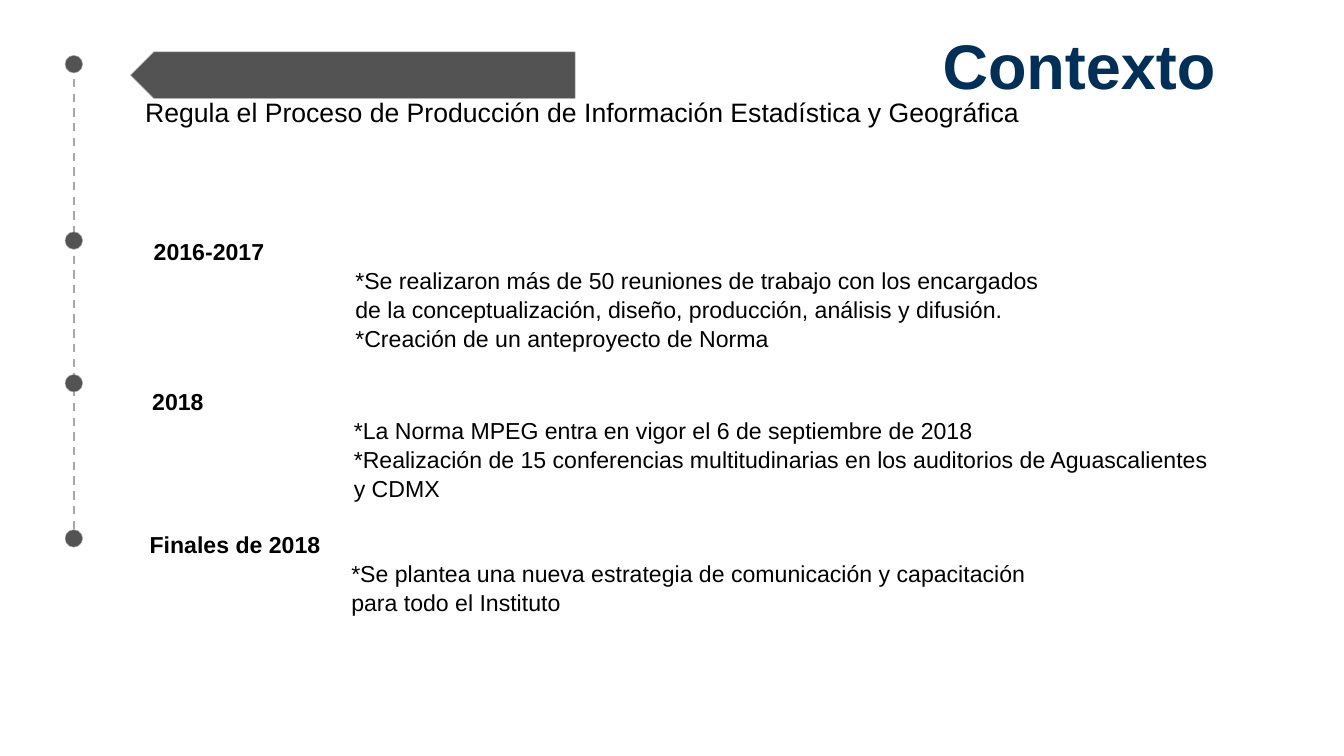
from pptx import Presentation
from pptx.dml.color import RGBColor
from pptx.enum.dml import MSO_LINE
from pptx.enum.shapes import MSO_CONNECTOR, MSO_SHAPE
from pptx.enum.text import MSO_ANCHOR, MSO_AUTO_SIZE, PP_ALIGN
from pptx.oxml.ns import qn
from pptx.util import Pt
from lxml.etree import SubElement

# Content: boxes are (left, top, width, height) in points
TITLE = ("Contexto", (1224, 25, 635, 132.5))
SUBTITLE = ("Regula el Proceso de Producción de Información Estadística y Geográfica",
            (200, 128, 1350, 74))
MILESTONES = [
    ("2016-2017", (212.4, 329.8, 1312, 165), [
        "*Se realizaron más de 50 reuniones de trabajo con los encargados "
        "de la conceptualización, diseño, producción, análisis y difusión.",
        "*Creación de un anteproyecto de Norma"]),
    ("2018", (210.2, 543.9, 1534.3, 165), [
        "*La Norma MPEG entra en vigor el 6 de septiembre de 2018",
        "*Realización de 15 conferencias multitudinarias en los auditorios "
        "de Aguascalientes y CDMX"]),
    ("Finales de 2018", (206.6, 748.4, 1283.8, 130), [
        "*Se plantea una nueva estrategia de comunicación y capacitación "
        "para todo el Instituto"]),
]
DOT_TOPS = [79.2, 331.2, 535, 756.7]
DOT_SIZE = 25
TIMELINE_X = 105.5
BANNER = (186.5, 74.2, 635, 66.2)
DETAIL_INDENT = 288

THEME = {
    "font": "Arial",
    "title_size": 90, "subtitle_size": 38, "body_size": 33,
    "title": RGBColor.from_string("002F58"),
    "text": RGBColor.from_string("000000"),
    "dark": RGBColor.from_string("535353"),
    "line": RGBColor.from_string("A7A7A7"),
}


def place(box, bounds, inset, anchor):
    box.left, box.top, box.width, box.height = map(Pt, bounds)
    frame = box.text_frame
    frame.auto_size = MSO_AUTO_SIZE.NONE
    frame.word_wrap = True
    frame.vertical_anchor = anchor
    frame.margin_left = frame.margin_right = Pt(inset)
    frame.margin_top = frame.margin_bottom = Pt(inset)
    return frame


def style(para, size, color, bold=False, indent=0, spacing=1.05, align=PP_ALIGN.LEFT):
    properties = para._p.get_or_add_pPr()
    properties.set("marL", str(Pt(indent)))
    properties.set("indent", "0")
    SubElement(properties, qn("a:buNone"))
    para.alignment = align
    para.line_spacing = spacing
    para.space_before = para.space_after = Pt(0)
    para.font.name = THEME["font"]
    para.font.size = Pt(size)
    para.font.bold = bold
    para.font.color.rgb = color


def add_solid(page, kind, bounds):
    shape = page.shapes.add_shape(kind, *map(Pt, bounds))
    shape.shadow.inherit = False
    shape.fill.solid()
    shape.fill.fore_color.rgb = THEME["dark"]
    shape.line.color.rgb = THEME["line"]
    shape.line.width = Pt(0.75)
    return shape


def add_timeline(page):
    line = page.shapes.add_connector(
        MSO_CONNECTOR.STRAIGHT, Pt(TIMELINE_X), Pt(DOT_TOPS[0] + DOT_SIZE / 2),
        Pt(TIMELINE_X), Pt(DOT_TOPS[-1] + DOT_SIZE))
    line.line.color.rgb = THEME["line"]
    line.line.width = Pt(3)
    line.line.dash_style = MSO_LINE.DASH
    SubElement(line._element.spPr, qn("a:effectLst"))
    for top in DOT_TOPS:
        add_solid(page, MSO_SHAPE.OVAL,
                  (TIMELINE_X - DOT_SIZE / 2, top, DOT_SIZE, DOT_SIZE))


def main():
    deck = Presentation()
    deck.slide_width, deck.slide_height = Pt(1920), Pt(1080)
    # The Comparison layout offers a title and four body placeholders
    page = deck.slides.add_slide(deck.slide_layouts[4])
    title, subtitle, *bodies = page.placeholders

    # Title and subtitle
    frame = place(title, TITLE[1], 3.6, MSO_ANCHOR.MIDDLE)
    frame.text = TITLE[0]
    style(frame.paragraphs[0], THEME["title_size"], THEME["title"], bold=True,
          spacing=1.0, align=PP_ALIGN.CENTER)
    frame = place(subtitle, SUBTITLE[1], 7.2, MSO_ANCHOR.TOP)
    frame.text = SUBTITLE[0]
    style(frame.paragraphs[0], THEME["subtitle_size"], THEME["text"])

    # Milestones: bold date, then indented details
    for body, (date, bounds, details) in zip(bodies, MILESTONES):
        frame = place(body, bounds, 7.2, MSO_ANCHOR.TOP)
        frame.text = "\n".join([date, *details])
        for number, para in enumerate(frame.paragraphs):
            style(para, THEME["body_size"], THEME["text"], bold=number == 0,
                  indent=DETAIL_INDENT if number else 0)

    # Timeline and left-pointing banner
    add_timeline(page)
    banner = add_solid(page, MSO_SHAPE.PENTAGON, BANNER)
    banner.rotation = 180

    deck.save("out.pptx")


if __name__ == "__main__":
    main()
